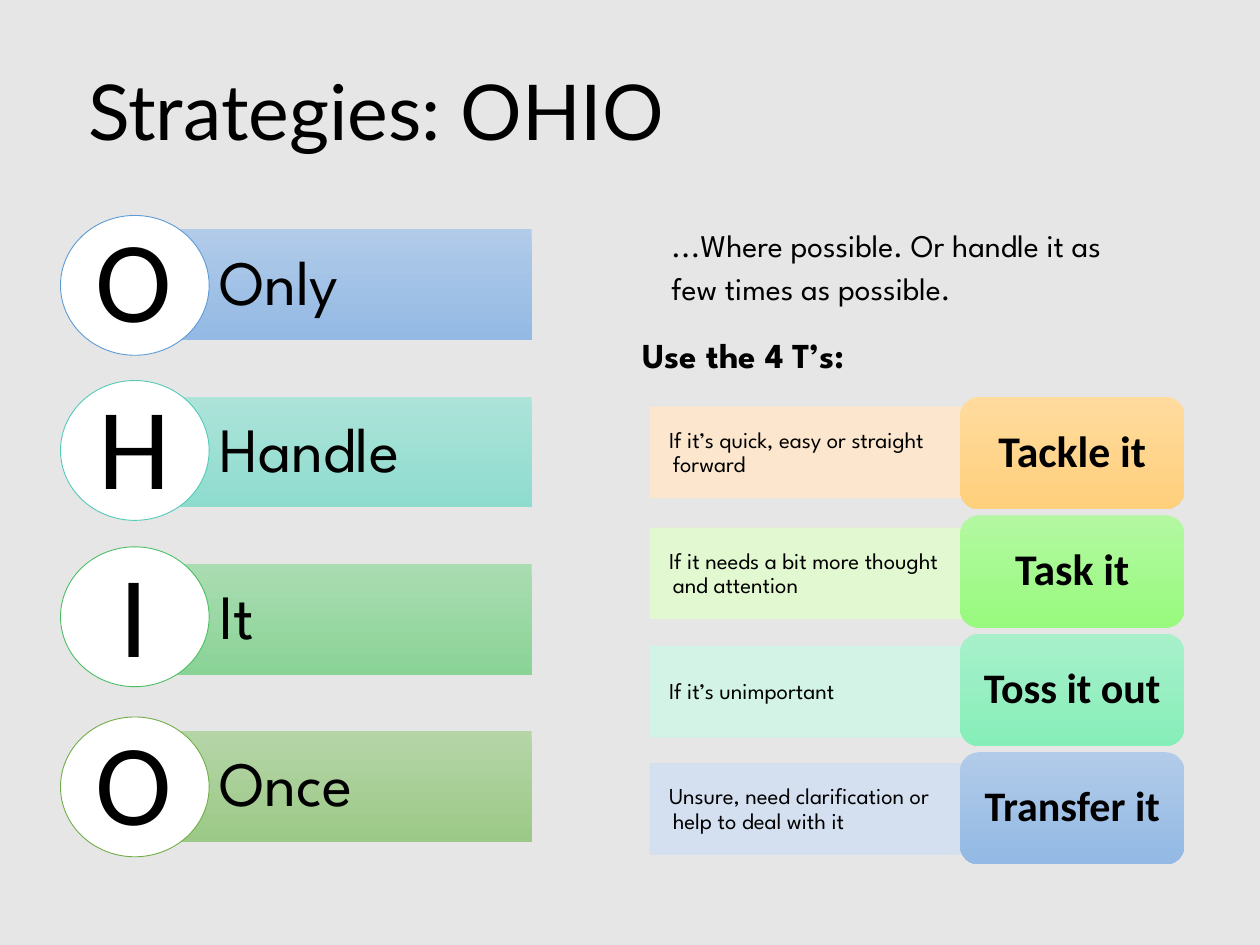
import pptx
import pptx.util
import pptx.dml.color
import pptx.enum.shapes
import pptx.enum.text
import pptx.oxml.ns
import lxml.etree

Inches = pptx.util.Inches
Kind = pptx.enum.shapes.MSO_SHAPE
Align = pptx.enum.text.PP_ALIGN
Anchor = pptx.enum.text.MSO_ANCHOR

COLORS = {
    "back": "E7E6E6", "ink": "000000", "white": "FFFFFF",
    "blue": ("B1CBE9", "93B9E4"), "teal": ("ADE3D9", "8EDCCE"),
    "green": ("AADCB2", "8AD396"), "olive": ("B5D5A7", "9CC987"),
    "gold": ("FFDB9E", "FFD07C"), "lime": ("B3F8A1", "98FA7E"),
    "mint": ("A8F0CA", "86EEB9"),
    "blue rim": "5B9BD5", "teal rim": "52CAB8",
    "green rim": "49BF64", "olive rim": "70AD47",
    "gold pale": "FFE8CC", "lime pale": "E1FACE",
    "mint pale": "D0F5E5", "blue pale": "D2DFF0",
}


def rgb(name):
    return pptx.dml.color.RGBColor.from_string(COLORS.get(name, name))


def write(shape, text, font="League Spartan", size=18, bold=False, align=Align.LEFT,
          anchor=Anchor.MIDDLE, space=0.9, after=0, inset=(0.1, 0.05, 0.1, 0.05),
          wrap=True, hang=None):
    frame = shape.text_frame
    frame.word_wrap = wrap
    frame.vertical_anchor = anchor
    frame.margin_left, frame.margin_top, frame.margin_right, frame.margin_bottom = map(Inches, inset)
    para = frame.paragraphs[0]
    para.text = text
    para.alignment = align
    para.line_spacing = space
    para.space_after = pptx.util.Pt(after)
    if hang:
        props = para._p.get_or_add_pPr()
        props.set("marL", str(Inches(hang[0])))
        props.set("indent", str(Inches(hang[1])))
    para.font.name = font
    para.font.size = pptx.util.Pt(size)
    para.font.bold = bold
    para.font.color.rgb = rgb("ink")


deck = pptx.Presentation()
deck.slide_width, deck.slide_height = Inches(10), Inches(7.5)
slide = deck.slides.add_slide(deck.slide_layouts[5])
slide.background.fill.solid()
slide.background.fill.fore_color.rgb = rgb("back")
shapes = slide.shapes


def draw(kind, left, top, width, height, fill, rim=None, alpha=None):
    shape = shapes.add_shape(kind, Inches(left), Inches(top), Inches(width), Inches(height))
    shape.shadow.inherit = False
    if isinstance(COLORS[fill], tuple):
        shape.fill.gradient()
        shape.fill.gradient_angle = 270
        for stop, tone in zip(shape.fill.gradient_stops, COLORS[fill]):
            stop.color.rgb = rgb(tone)
    else:
        shape.fill.solid()
        shape.fill.fore_color.rgb = rgb(fill)
    if rim:
        shape.line.color.rgb = rgb(rim)
        shape.line.width = pptx.util.Pt(0.5)
    else:
        shape.line.fill.background()
    if alpha:
        for tone in shape._element.spPr.iter(pptx.oxml.ns.qn("a:srgbClr")):
            lxml.etree.SubElement(tone, pptx.oxml.ns.qn("a:alpha")).set("val", str(alpha * 1000))
    return shape


title = shapes.title
title.left, title.top, title.width, title.height = map(Inches, (0.6, 0.37, 8.63, 1.1))
write(title, "Strategies: OHIO", font="Lato", size=44)

steps = [("Only", "blue", 1.71), ("Handle", "teal", 3.02),
         ("It", "green", 4.34), ("Once", "olive", 5.69)]
for row, (word, tone, top) in enumerate(steps):
    bar = draw(Kind.RECTANGLE, 1.2, 1.82 + 1.327 * row, 3.02, 0.88, tone)
    write(bar, word, size=36, inset=(0.54, 0.09, 0.09, 0.09))
    draw(Kind.OVAL, 0.48, top, 1.18, 1.11, "white", rim=tone + " rim")
    box = shapes.add_textbox(Inches(0.6), Inches(1.59 + 1.333 * row), Inches(0.93), Inches(1.28))
    write(box, word[0], font="Calibri", size=66, align=Align.CENTER,
          anchor=Anchor.TOP, space=1, wrap=False)

notes = [("...Where possible. Or handle it as few times as possible.", 5.23, 1.7, 0.77, 18, False),
         ("Use the 4 T’s:", 5, 2.55, 0.45, 20, True)]
for text, left, top, height, size, bold in notes:
    box = shapes.add_textbox(Inches(left), Inches(top), Inches(3.99), Inches(height))
    write(box, text, size=size, bold=bold, anchor=Anchor.TOP, space=1.15, after=8)

tasks = [("Tackle it", "If it’s quick, easy or straight forward", "gold", 3.59, 25),
         ("Task it", "If it needs a bit more thought and attention", "lime", 4.55, 25),
         ("Toss it out", "If it’s unimportant", "mint", 5.49, 24),
         ("Transfer it", "Unsure, need clarification or help to deal with it", "blue", 6.42, 24)]
for row, (name, case, tone, mid, size) in enumerate(tasks):
    pale = tone + " pale"
    strip = draw(Kind.ROUND_2_SAME_RECTANGLE, 6.08, mid - 1.28, 0.72, 2.56, pale, rim=pale, alpha=90)
    strip.rotation = 90
    box = shapes.add_textbox(Inches(5.16), Inches(mid - 0.32), Inches(2.52), Inches(0.65))
    write(box, case, size=13, inset=(0.05, 0.03, 0.05, 0.03), hang=(0.13, -0.03))
    pill = draw(Kind.ROUNDED_RECTANGLE, 7.62, 3.15 + 0.94 * row, 1.78, 0.89, tone)
    write(pill, name, font="Calibri", size=size, bold=True, align=Align.CENTER)

deck.save("out.pptx")
